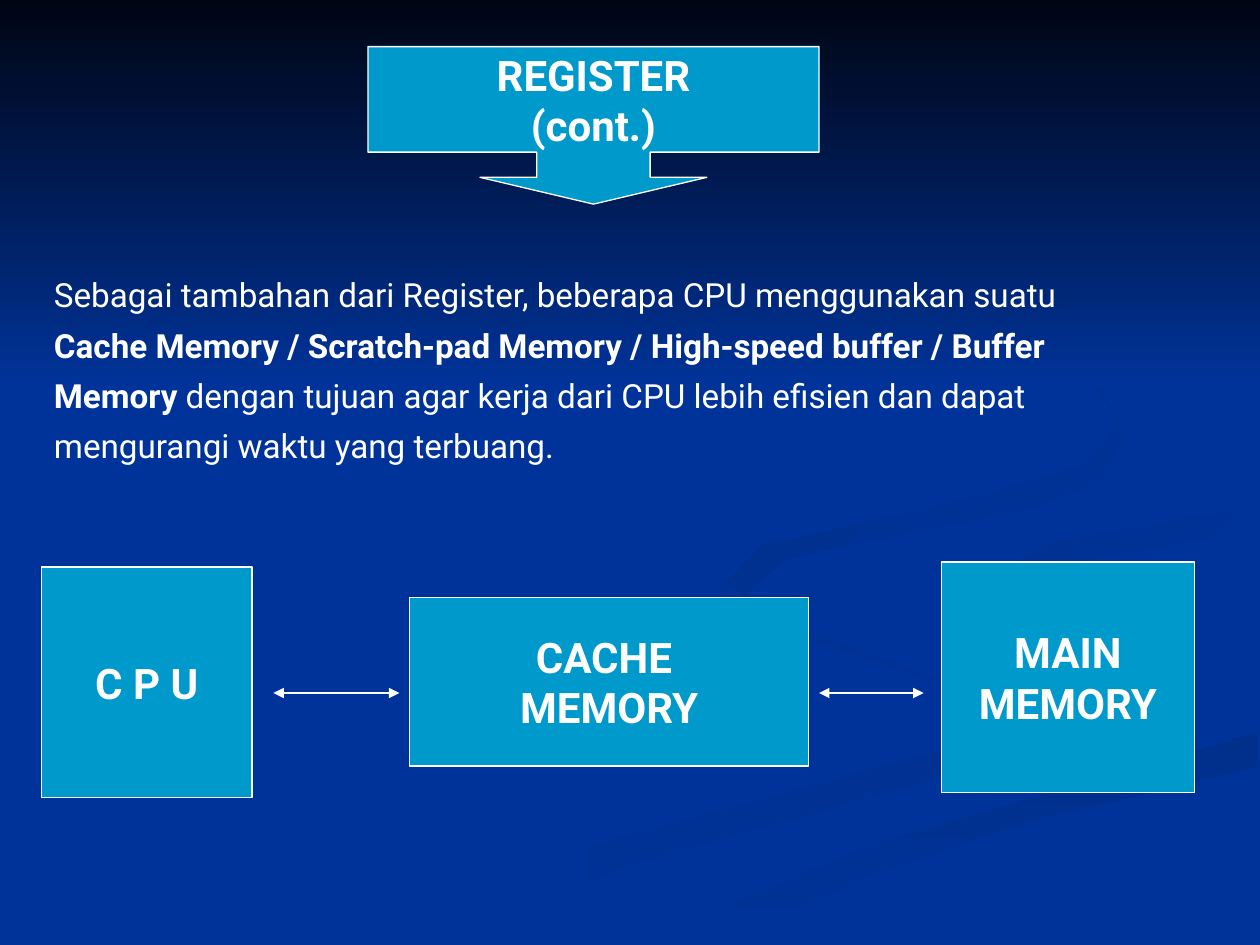
from dataclasses import dataclass

from lxml import etree
from pptx import Presentation
from pptx.dml.color import RGBColor
from pptx.enum import shapes, text
from pptx.oxml.ns import qn
from pptx.util import Emu, Pt

PX = 9144  # 100 px to the inch
WIDTH, HEIGHT = 1000, 750
FONT = "Roboto"
WHITE = RGBColor(0xFF, 0xFF, 0xFF)
CYAN = RGBColor(0x00, 0x99, 0xCC)
BLUE = RGBColor(0x00, 0x33, 0x99)
BLUE_DIM = RGBColor(0x00, 0x31, 0x93)
BLUE_DEEP = RGBColor(0x00, 0x2F, 0x8C)
NIGHT = RGBColor(0x00, 0x05, 0x14)


@dataclass
class Ribbon:
    """A background swoosh, fading from one colour to another."""
    start: RGBColor
    end: RGBColor
    angle: int
    points: list[tuple[int, int]]


@dataclass
class Box:
    left: int
    top: int
    width: int
    height: int
    lines: list[str]
    kind: shapes.MSO_SHAPE = shapes.MSO_SHAPE.RECTANGLE
    adjustments: tuple[float, ...] = ()


@dataclass
class Arrow:
    left: int
    right: int
    y: int


RIBBONS = [
    Ribbon(BLUE, BLUE_DIM, 0, [
        (575, 459), (594, 485), (757, 543), (786, 566), (739, 598), (458, 674),
        (300, 749), (361, 749), (499, 687), (756, 614), (800, 581), (781, 553),
        (594, 491), (570, 468)]),
    Ribbon(BLUE, BLUE_DIM, 45, [
        (724, 464), (745, 490), (905, 540), (943, 570), (894, 605), (918, 581),
        (892, 553), (766, 512)]),
    Ribbon(BLUE_DEEP, BLUE, 90, [
        (503, 749), (571, 749), (695, 692), (821, 651), (998, 609), (998, 581),
        (764, 647), (630, 693)]),
    Ribbon(BLUE, BLUE, 0, [
        (725, 464), (745, 490), (905, 540), (943, 570), (902, 603), (663, 668),
        (477, 749), (503, 749), (696, 669), (999, 581), (999, 538), (817, 492),
        (782, 460), (835, 430), (999, 402), (999, 387), (770, 427)]),
    Ribbon(BLUE_DIM, BLUE, 45, [
        (781, 460), (791, 478), (826, 496), (805, 476), (843, 448), (998, 420),
        (998, 402), (835, 430)]),
    Ribbon(BLUE_DEEP, BLUE, 45, [
        (683, 430), (825, 402), (876, 378), (894, 344), (864, 291), (762, 233),
        (846, 279), (889, 335), (861, 370), (763, 398), (605, 433), (577, 462),
        (622, 500), (593, 470), (624, 444)]),
]

BOXES = [
    Box(33, 450, 167, 183, ["C P U"]),
    Box(325, 474, 317, 134, ["CACHE ", "MEMORY"]),
    Box(747, 446, 201, 183, ["MAIN", "MEMORY"]),
    Box(292, 37, 358, 125, ["REGISTER", "(cont.)"],
        shapes.MSO_SHAPE.DOWN_ARROW_CALLOUT, (0.72, 0.72, 0.17, 0.67)),
]

ARROWS = [Arrow(217, 317, 550), Arrow(650, 733, 550)]

# Each line is a list of (wording, bold) runs.
BODY = [
    [("Sebagai tambahan dari Register, beberapa CPU menggunakan suatu", False)],
    [("Cache Memory / Scratch-pad Memory / High-speed buffer / Buffer", True)],
    [("Memory", True), (" dengan tujuan agar kerja dari CPU lebih efisien dan dapat", False)],
    [("mengurangi waktu yang terbuang.", False)],
]


def px(length: int) -> Emu:
    return Emu(length * PX)


def style_font(font, size: int) -> None:
    font.name, font.size = FONT, Pt(size)
    font.color.rgb = WHITE


def fade(shape, start: RGBColor, end: RGBColor, angle: int) -> None:
    """Fill without outline; angle runs clockwise from left to right."""
    shape.shadow.inherit = False
    shape.line.fill.background()
    shape.fill.gradient()
    shape.fill.gradient_angle = -angle % 360
    for stop, color in zip(shape.fill.gradient_stops, (start, end)):
        stop.color.rgb = color


def draw_ribbon(slide, ribbon: Ribbon) -> None:
    builder = slide.shapes.build_freeform(*ribbon.points[0], scale=PX)
    builder.add_line_segments(ribbon.points[1:], close=True)
    fade(builder.convert_to_shape(), ribbon.start, ribbon.end, ribbon.angle)


def draw_night_band(slide) -> None:
    band = slide.shapes.add_shape(
        shapes.MSO_SHAPE.RECTANGLE, 0, 0, px(WIDTH), px(308))
    fade(band, NIGHT, BLUE, 90)


def draw_box(slide, box: Box) -> None:
    shape = slide.shapes.add_shape(
        box.kind, px(box.left), px(box.top), px(box.width), px(box.height))
    for index, value in enumerate(box.adjustments):
        shape.adjustments[index] = value
    shape.shadow.inherit = False
    shape.fill.solid()
    shape.fill.fore_color.rgb = CYAN
    shape.line.color.rgb = WHITE
    shape.line.width = Pt(0.75)
    frame = shape.text_frame
    frame.word_wrap = False
    frame.vertical_anchor = text.MSO_ANCHOR.MIDDLE
    frame.text = "\n".join(box.lines)
    for paragraph in frame.paragraphs:
        paragraph.alignment = text.PP_ALIGN.CENTER
        style_font(paragraph.font, 24)
        paragraph.font.bold = True


def draw_arrow(slide, arrow: Arrow) -> None:
    connector = slide.shapes.add_connector(
        shapes.MSO_CONNECTOR.STRAIGHT,
        px(arrow.left), px(arrow.y), px(arrow.right), px(arrow.y))
    connector.line.color.rgb = WHITE
    connector.line.width = Pt(0.75)
    properties = connector._element.spPr
    line = properties.find(qn("a:ln"))
    for end in ("a:headEnd", "a:tailEnd"):
        etree.SubElement(line, qn(end), type="triangle")
    etree.SubElement(properties, qn("a:effectLst"))


def draw_body(slide) -> None:
    frame = slide.shapes.add_textbox(px(33), px(213), px(941), px(177)).text_frame
    frame.word_wrap = True
    for index, runs in enumerate(BODY):
        paragraph = frame.add_paragraph() if index else frame.paragraphs[0]
        paragraph.space_before = Pt(6)
        style_font(paragraph.font, 19)
        for wording, bold in runs:
            run = paragraph.add_run()
            run.text = wording
            run.font.bold = bold


def main() -> None:
    presentation = Presentation()
    presentation.slide_width, presentation.slide_height = px(WIDTH), px(HEIGHT)
    slide = presentation.slides.add_slide(presentation.slide_layouts[6])
    slide.background.fill.solid()
    slide.background.fill.fore_color.rgb = BLUE
    for ribbon in RIBBONS:
        draw_ribbon(slide, ribbon)
    draw_night_band(slide)
    for box in BOXES:
        draw_box(slide, box)
    for arrow in ARROWS:
        draw_arrow(slide, arrow)
    draw_body(slide)
    presentation.save("out.pptx")


if __name__ == "__main__":
    main()
